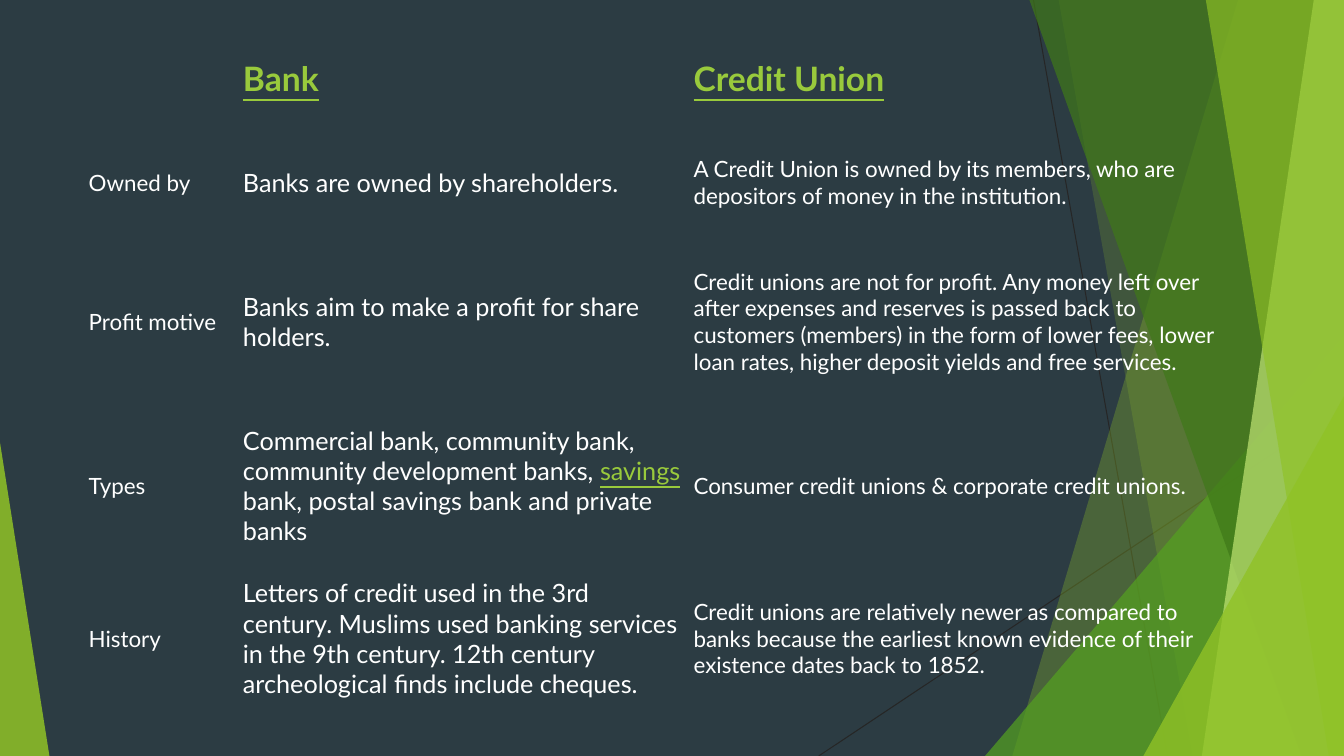
from dataclasses import dataclass

from lxml import etree
from pptx import Presentation
from pptx.dml.color import RGBColor
from pptx.dml.fill import FillFormat
from pptx.enum.shapes import MSO_CONNECTOR as Connector, MSO_SHAPE as Preset
from pptx.enum.text import MSO_ANCHOR as Anchor
from pptx.oxml.ns import qn
from pptx.shapes.autoshape import Shape
from pptx.slide import Slide
from pptx.table import _Cell as Cell
from pptx.util import Inches, Pt

WIDTH, HEIGHT = 13.33, 7.5
NO_GRID_STYLE = "{2D5ABB26-0587-4C30-8999-92F81FD0307C}"
BACKGROUND, WHITE, ACCENT, LINE = "2C3C43", "FFFFFF", "99CA3C", "262626"
LEAF = "90C226"


@dataclass
class Ray:
    start: tuple[float, float]
    end: tuple[float, float]


@dataclass
class Band:
    """A full-height panel from a slanted left side to the right slide edge."""
    top_x: float
    bottom_x: float
    color: str
    opacity: int


@dataclass
class Corner:
    """A right triangle standing on the bottom slide edge."""
    left: float
    top: float
    width: float
    apex: float
    color: str
    opacity: int


@dataclass
class Span:
    text: str
    accent: bool = False


RAYS = [Ray((10.25, 0), (11.58, HEIGHT)), Ray((WIDTH, 4.03), (8.12, HEIGHT))]
FACETS = [
    Band(12.28, 10.04, LEAF, 30),
    Band(10.5, 11.83, LEAF, 20),
    Corner(9.77, 3.33, 3.56, 1, "54A021", 72),
    Band(10.21, 12.91, "3F7819", 70),
    Band(13.03, 11.92, "C0E474", 70),
    Band(11.96, 13.18, LEAF, 65),
    Corner(11.34, 3.93, 1.99, 1, LEAF, 80),
    Corner(0, 4.39, 0.49, 0, LEAF, 85),
]

COLUMN_WIDTHS = [1.53, 4.47, 5.38]
COLUMN_SIZES = [16, 18, 16]
HEADER_SIZE = 24
ROW_HEIGHTS = [1.2, 0.86, 1.9, 1.36, 1.67]
ROWS = [
    [[], [Span("Bank", True)], [Span("Credit Union", True)]],
    [
        [Span("Owned by")],
        [Span("Banks are owned by shareholders.")],
        [Span("A Credit Union is owned by its members, who are depositors of "
              "money in the institution.")],
    ],
    [
        [Span("Profit motive")],
        [Span("Banks aim to make a profit for share holders.")],
        [Span("Credit unions are not for profit. Any money left over after "
              "expenses and reserves is passed back to customers (members) in "
              "the form of lower fees, lower loan rates, higher deposit yields "
              "and free services.")],
    ],
    [
        [Span("Types")],
        [Span("Commercial bank, community bank, community development banks, "),
         Span("savings", True),
         Span(" bank, postal savings bank and private banks")],
        [Span("Consumer credit unions & corporate credit unions.")],
    ],
    [
        [Span("History")],
        [Span("Letters of credit used in the 3rd century. Muslims used banking "
              "services in the 9th century. 12th century archeological finds "
              "include cheques.")],
        [Span("Credit unions are relatively newer as compared to banks because "
              "the earliest known evidence of their existence dates back to "
              "1852.")],
    ],
]


def paint(fill: FillFormat, color: str) -> None:
    fill.solid()
    fill.fore_color.rgb = RGBColor.from_string(color)


def draw_ray(page: Slide, ray: Ray) -> None:
    points = [Inches(value) for value in (*ray.start, *ray.end)]
    line = page.shapes.add_connector(Connector.STRAIGHT, *points)
    paint(line.line.fill, LINE)
    line.line.width = Pt(0.75)
    etree.SubElement(line._element.spPr, qn("a:effectLst"))


def add_band(page: Slide, band: Band) -> Shape:
    outline = [(band.top_x, 0), (WIDTH, 0), (WIDTH, HEIGHT), (band.bottom_x, HEIGHT)]
    points = [(Inches(x), Inches(y)) for x, y in outline]
    builder = page.shapes.build_freeform(*points[0])
    builder.add_line_segments(points[1:], close=True)
    return builder.convert_to_shape()


def add_corner(page: Slide, corner: Corner) -> Shape:
    shape = page.shapes.add_shape(
        Preset.ISOSCELES_TRIANGLE, Inches(corner.left), Inches(corner.top),
        Inches(corner.width), Inches(HEIGHT - corner.top))
    shape.adjustments[0] = corner.apex
    return shape


def draw_facet(page: Slide, facet: Band | Corner) -> None:
    add = add_band if isinstance(facet, Band) else add_corner
    shape = add(page, facet)
    shape.shadow.inherit = False
    shape.line.fill.background()
    paint(shape.fill, facet.color)
    color = shape._element.spPr.find(qn("a:solidFill"))[0]
    etree.SubElement(color, qn("a:alpha"), val=str(facet.opacity * 1000))


def fill_cell(cell: Cell, spans: list[Span], size: int, bold: bool) -> None:
    cell.fill.background()
    cell.vertical_anchor = Anchor.MIDDLE
    cell.margin_left = cell.margin_right = Inches(0.06)
    cell.margin_top = cell.margin_bottom = Inches(0.03)
    para = cell.text_frame.paragraphs[0]
    for span in spans:
        run = para.add_run()
        run.text = span.text
        run.font.name = "Lato"
        run.font.size = Pt(size)
        run.font.bold = bold
        run.font.underline = span.accent
        paint(run.font.fill, ACCENT if span.accent else WHITE)


def draw_comparison(page: Slide) -> None:
    frame = page.shapes.add_table(
        len(ROWS), len(COLUMN_WIDTHS), Inches(0.82), Inches(0.18),
        Inches(sum(COLUMN_WIDTHS)), Inches(sum(ROW_HEIGHTS)))
    table = frame.table
    table.first_row = table.horz_banding = False
    table._tbl.tblPr.find(qn("a:tableStyleId")).text = NO_GRID_STYLE
    for column, width in zip(table.columns, COLUMN_WIDTHS):
        column.width = Inches(width)
    for index, (row, height) in enumerate(zip(table.rows, ROW_HEIGHTS)):
        row.height = Inches(height)
        header = index == 0
        for cell, spans, size in zip(row.cells, ROWS[index], COLUMN_SIZES):
            fill_cell(cell, spans, HEADER_SIZE if header else size, header)


def main() -> None:
    deck = Presentation()
    deck.slide_width, deck.slide_height = Inches(WIDTH), Inches(HEIGHT)
    page = deck.slides.add_slide(deck.slide_layouts.get_by_name("Blank"))
    paint(page.background.fill, BACKGROUND)
    for ray in RAYS:
        draw_ray(page, ray)
    for facet in FACETS:
        draw_facet(page, facet)
    draw_comparison(page)
    deck.save("out.pptx")


if __name__ == "__main__":
    main()
